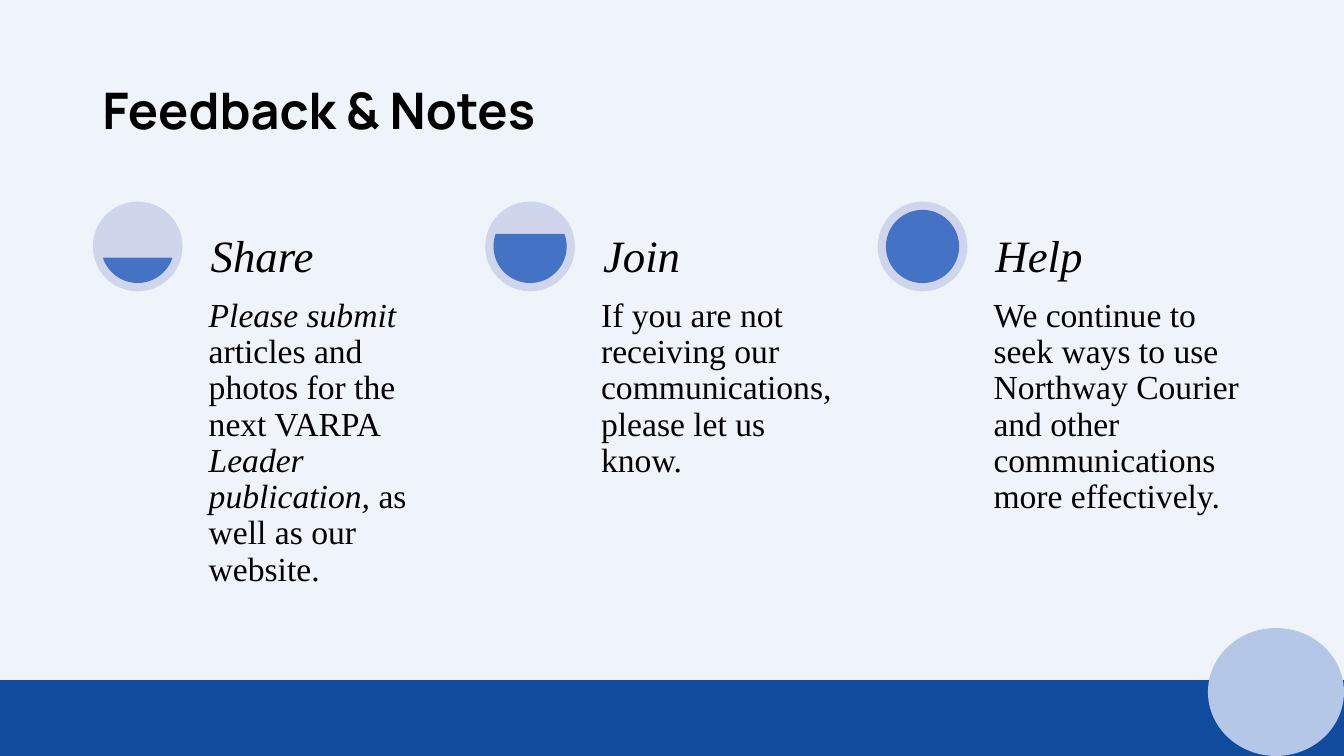
from dataclasses import dataclass
from math import asin, degrees

from pptx import Presentation
from pptx.dml.color import RGBColor
from pptx.enum.shapes import MSO_SHAPE
from pptx.enum.text import MSO_ANCHOR
from pptx.util import Pt


@dataclass(frozen=True)
class Theme:
    background: str = "EFF3FA"
    band: str = "114B9E"
    corner: str = "B4C7E7"
    ring: str = "CFD5EA"
    level: str = "4472C4"
    ink: str = "000000"
    title_font: str = "Manrope"
    text_font: str = "Times New Roman"
    title_size: float = 36
    heading_size: float = 32
    body_size: float = 24
    line_spacing: float = 0.9


class SlideBuilder:
    def __init__(self, page, theme):
        self.page = page
        self.theme = theme
        page.background.fill.solid()
        page.background.fill.fore_color.rgb = RGBColor.from_string(theme.background)

    def shape(self, kind, left, top, width, height, color, outlined=False):
        shape = self.page.shapes.add_shape(kind, Pt(left), Pt(top), Pt(width), Pt(height))
        shape.shadow.inherit = False
        shape.fill.solid()
        shape.fill.fore_color.rgb = RGBColor.from_string(color)
        if outlined:
            shape.line.color.rgb = RGBColor.from_string(color)
            shape.line.width = Pt(1)
        else:
            shape.line.fill.background()
        return shape

    def text(self, left, top, width, height, spans, size, font, inset,
             anchor=MSO_ANCHOR.TOP, bold=False):
        box = self.page.shapes.add_textbox(Pt(left), Pt(top), Pt(width), Pt(height))
        frame = box.text_frame
        frame.word_wrap = True
        frame.vertical_anchor = anchor
        frame.margin_left = frame.margin_right = Pt(inset[0])
        frame.margin_top = frame.margin_bottom = Pt(inset[1])
        para = frame.paragraphs[0]
        para.line_spacing = self.theme.line_spacing
        para.font.size = Pt(size)
        para.font.name = font
        para.font.bold = bold
        para.font.color.rgb = RGBColor.from_string(self.theme.ink)
        for words, italic in spans:
            span = para.add_run()
            span.text = words
            span.font.italic = italic

    def dial(self, left, top, size, share):
        self.shape(MSO_SHAPE.OVAL, left, top, size, size, self.theme.ring)
        inset = size / 10
        inner = size - 2 * inset
        chord = self.shape(MSO_SHAPE.CHORD, left + inset, top + inset, inner, inner,
                           self.theme.level, outlined=True)
        angle = degrees(asin(1 - 2 * share))
        chord.adjustments[0] = angle % 360 * 0.6
        chord.adjustments[1] = (180 - angle) * 0.6

    def topic(self, left, top, share, heading, body):
        theme = self.theme
        dial_size, text_left, text_width = 64.1, left + 77.8, 189.4
        self.dial(left, top, dial_size, share)
        self.text(text_left, top + dial_size, text_width, 269.3, body,
                  theme.body_size, theme.text_font, (5, 5))
        self.text(text_left, top, text_width, dial_size, [(heading, True)],
                  theme.heading_size, theme.text_font, (6.4, 6.4), MSO_ANCHOR.BOTTOM)


TOPICS = [
    ("Share", [
        ("Please submit ", True),
        ("articles and photos for the next VARPA ", False),
        ("Leader publication, ", True),
        ("as well as our website.", False),
    ]),
    ("Join", [
        ("If you are not receiving our communications, please let us know.", False),
    ]),
    ("Help", [
        ("We continue to seek ways to use Northway Courier and other "
         "communications more effectively.", False),
    ]),
]


def main():
    deck = Presentation()
    deck.slide_width, deck.slide_height = Pt(960), Pt(540)
    theme = Theme()
    builder = SlideBuilder(deck.slides.add_slide(deck.slide_layouts[6]), theme)

    builder.shape(MSO_SHAPE.RECTANGLE, 0, 486.4, 960, 53.6, theme.band, outlined=True)
    builder.shape(MSO_SHAPE.OVAL, 862.8, 448.6, 97.2, 91.4, theme.corner)
    builder.text(66, 28.8, 828, 104.4, [("Feedback & Notes", False)], theme.title_size,
                 theme.title_font, (7.2, 3.6), MSO_ANCHOR.MIDDLE, bold=True)

    for index, (heading, body) in enumerate(TOPICS):
        builder.topic(66.3 + index * 280.3, 144, (index + 1) / len(TOPICS), heading, body)

    deck.save("out.pptx")


if __name__ == "__main__":
    main()
